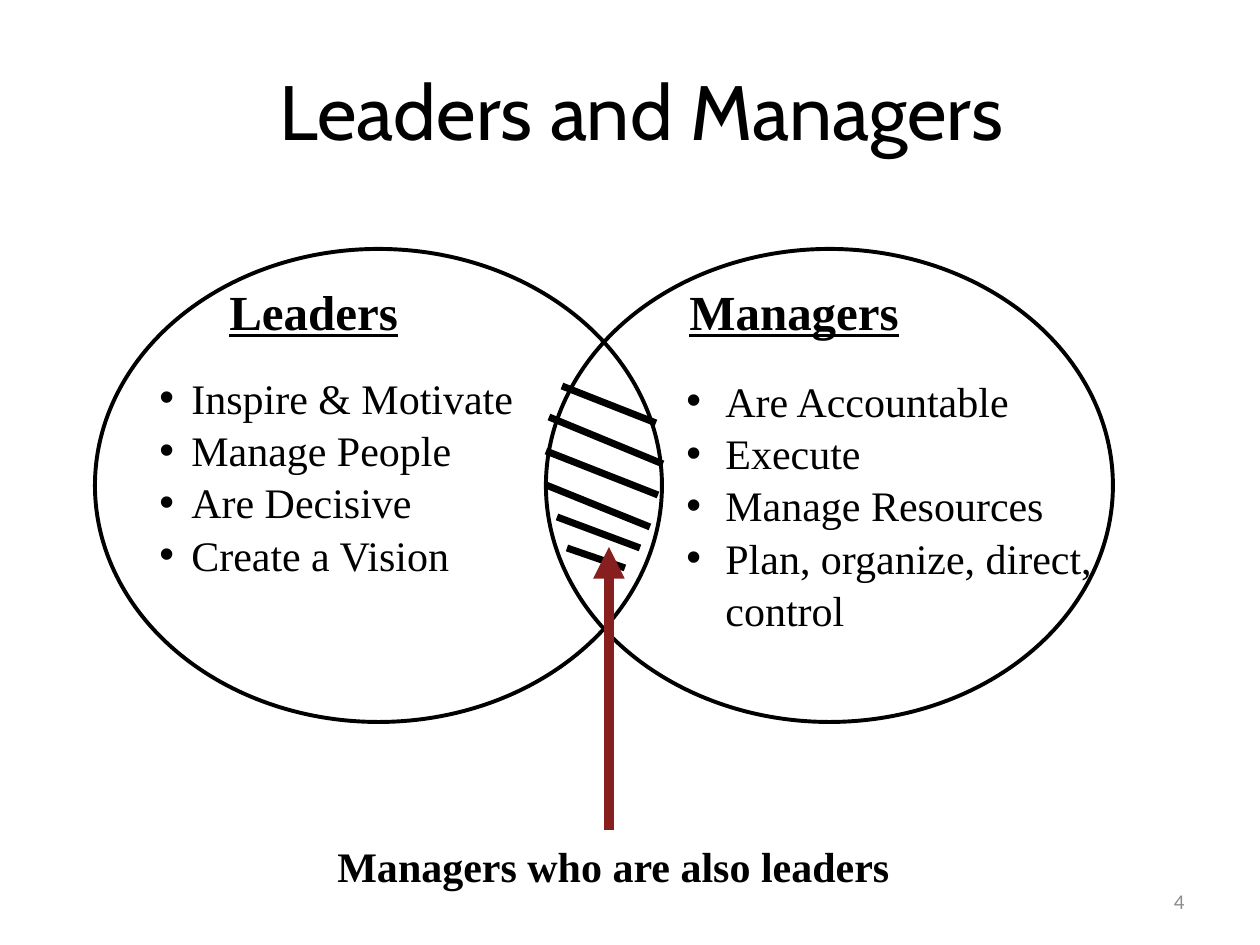
"""Build the Leaders and Managers Venn diagram slide."""
from dataclasses import dataclass

from lxml import etree
from pptx import Presentation
from pptx.dml.color import RGBColor
from pptx.enum.shapes import MSO_CONNECTOR, MSO_SHAPE
from pptx.enum.text import MSO_ANCHOR, PP_ALIGN
from pptx.oxml.ns import qn
from pptx.slide import Slide
from pptx.util import Pt

EMU_PER_PX = 914400 // 126
PAGE_WIDTH, PAGE_HEIGHT = 1260, 945
BLACK = RGBColor(0x00, 0x00, 0x00)
DARK_RED = RGBColor(0x87, 0x1F, 0x1F)
GRAY = RGBColor(0x8C, 0x8C, 0x8C)
LEFT, CENTER, RIGHT = PP_ALIGN.LEFT, PP_ALIGN.CENTER, PP_ALIGN.RIGHT
TOP, MIDDLE = MSO_ANCHOR.TOP, MSO_ANCHOR.MIDDLE
OVAL, STRAIGHT = MSO_SHAPE.OVAL, MSO_CONNECTOR.STRAIGHT
LEADER_TRAITS = ["Inspire & Motivate", "Manage People", "Are Decisive", "Create a Vision"]
MANAGER_TRAITS = ["Are Accountable", "Execute", "Manage Resources",
                  "Plan, organize, direct, control"]
HATCHING = [
    (562, 386, 656, 423),
    (549, 417, 663, 464),
    (546, 451, 658, 495),
    (546, 485, 650, 527),
    (557, 517, 640, 548),
    (567, 548, 625, 568),
]


def px(length):
    return length * EMU_PER_PX


@dataclass
class Painter:
    page: Slide
    font: str = "Times New Roman"
    size: int = 24
    color: RGBColor = BLACK

    def text(self, place, lines, size=None, font=None, color=None, bold=False,
             underline=False, align=LEFT, anchor=TOP, indent=0):
        box = self.page.shapes.add_textbox(*map(px, place))
        frame = box.text_frame
        frame.word_wrap = True
        frame.vertical_anchor = anchor
        for index, line in enumerate(lines):
            para = frame.add_paragraph() if index else frame.paragraphs[0]
            para.alignment = align
            if indent:
                self.bullet(para, indent)
            span = para.add_run()
            span.text = line
            span.font.name = font or self.font
            span.font.size = Pt(size or self.size)
            span.font.bold = bold
            span.font.underline = underline
            span.font.color.rgb = color or self.color

    def bullet(self, para, indent):
        para.line_spacing = 1.04
        properties = para._p.get_or_add_pPr()
        properties.set("marL", str(px(indent)))
        properties.set("indent", str(-px(indent)))
        etree.SubElement(properties, qn("a:buFont"), typeface="Arial")
        etree.SubElement(properties, qn("a:buChar"), char="•")

    def oval(self, place):
        shape = self.page.shapes.add_shape(OVAL, *map(px, place))
        shape.shadow.inherit = False
        shape.fill.background()
        shape.line.color.rgb = self.color
        shape.line.width = Pt(2.25)

    def line(self, ends, width, color=None, arrow=False):
        connector = self.page.shapes.add_connector(STRAIGHT, *map(px, ends))
        connector.line.color.rgb = color or self.color
        connector.line.width = Pt(width)
        etree.SubElement(connector._element.spPr, qn("a:effectLst"))
        if arrow:
            outline = connector.line._get_or_add_ln()
            etree.SubElement(outline, qn("a:tailEnd"), type="triangle")


def main():
    deck = Presentation()
    deck.slide_width, deck.slide_height = px(PAGE_WIDTH), px(PAGE_HEIGHT)
    painter = Painter(deck.slides.add_slide(deck.slide_layouts[6]))

    painter.text((34, 39, 1216, 142), ["Leaders and Managers"], size=44, font="Cabin",
                 align=CENTER, anchor=MIDDLE)
    painter.text((147, 364, 382, 217), LEADER_TRAITS, indent=32)
    for left in (95, 546):
        painter.oval((left, 249, 567, 473))
    painter.text((325, 834, 599, 64), ["Managers who are also leaders"], bold=True)
    for left, heading in ((217, "Leaders"), (677, "Managers")):
        painter.text((left, 275, 260, 73), [heading], size=28, bold=True, underline=True)
    for ends in HATCHING:
        painter.line(ends, 4)
    painter.line((609, 830, 609, 547), 6, DARK_RED, arrow=True)
    painter.text((674, 367, 449, 268), MANAGER_TRAITS, indent=39)
    painter.text((903, 876, 294, 50), ["4"], size=12, font="Calibri", color=GRAY,
                 align=RIGHT, anchor=MIDDLE)

    deck.save("out.pptx")


if __name__ == "__main__":
    main()
